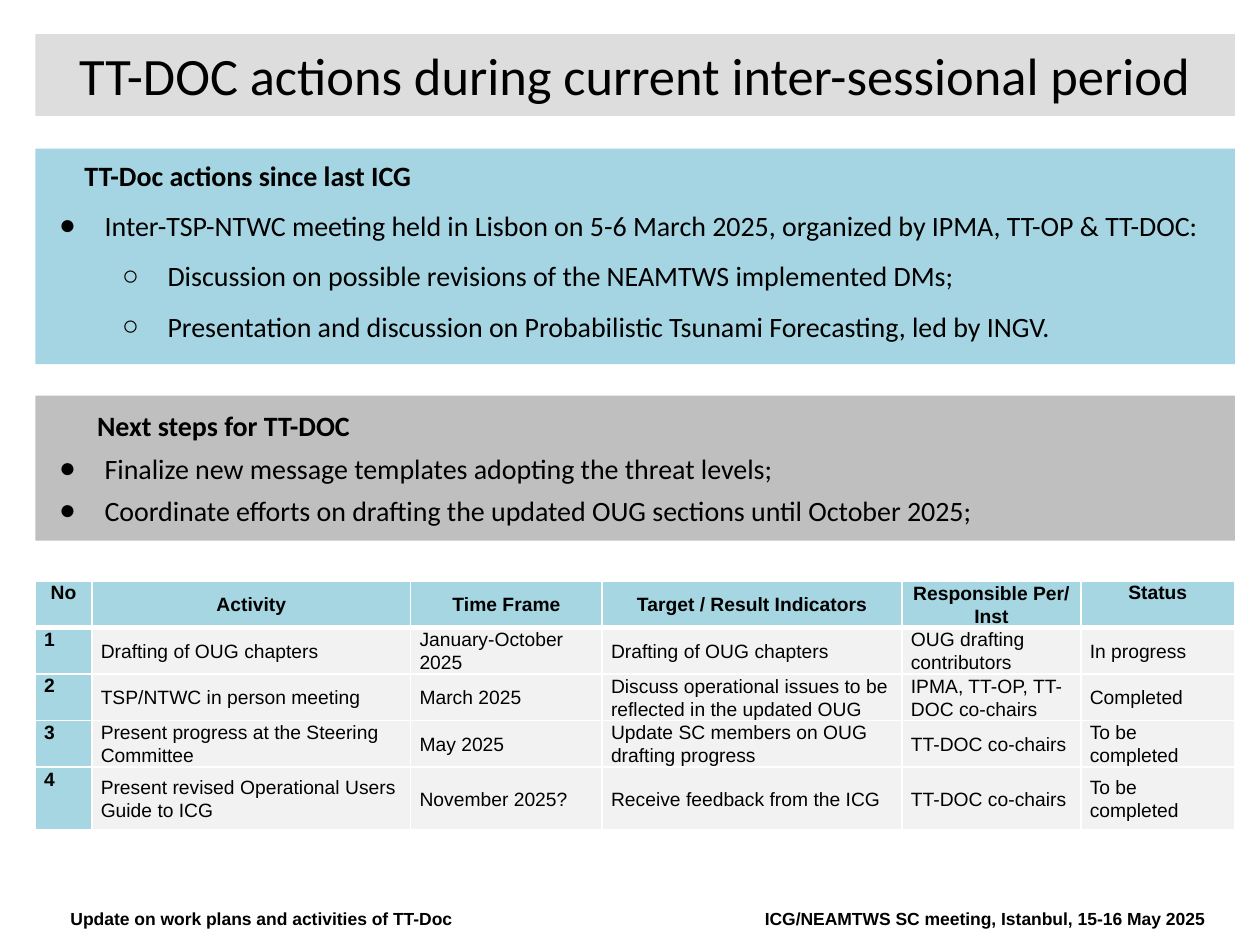
from lxml import etree
from pptx import Presentation
from pptx.dml.color import RGBColor
from pptx.enum import text
from pptx.oxml import ns
from pptx.util import Inches, Pt

BLUE, GRAY, BLACK = "A5D5E2", "BFBFBF", "000000"
HEAD_BLUE, PALE = "A5D6E2", "F2F2F2"
LEFT, WIDTH = 0.28, 9.52


def rgb(value):
    return RGBColor.from_string(value)


def add_run(p, words, size, font, bold=False):
    r = p.add_run()
    r.text = words
    r.font.size, r.font.name, r.font.bold = Pt(size), font, bold
    r.font.color.rgb = rgb(BLACK)


prs = Presentation()
prs.slide_width, prs.slide_height = Inches(10), Inches(7.5)
s = prs.slides.add_slide(prs.slide_layouts[3])
title, actions, steps = s.placeholders

# Filled bands for the title and the two lists
bands = [
    (title, 0.27, 0.65, "DDDDDD", text.MSO_ANCHOR.MIDDLE),
    (actions, 1.18, 1.71, BLUE, text.MSO_ANCHOR.TOP),
    (steps, 3.14, 1.15, GRAY, text.MSO_ANCHOR.MIDDLE),
]
for sp, top, height, fill, anchor in bands:
    sp.left, sp.top = Inches(LEFT), Inches(top)
    sp.width, sp.height = Inches(WIDTH), Inches(height)
    sp.fill.solid()
    sp.fill.fore_color.rgb = rgb(fill)
    tf = sp.text_frame
    tf.auto_size = text.MSO_AUTO_SIZE.NONE
    tf.vertical_anchor = anchor
    tf.margin_left = tf.margin_right = tf.margin_top = tf.margin_bottom = Inches(0.05)

# Title
p = title.text_frame.paragraphs[0]
p.alignment = text.PP_ALIGN.CENTER
add_run(p, "TT-DOC actions during current inter-sessional period", 30, "Calibri")

# Lists: bullet, left margin, line spacing, space before, words
lists = [
    (actions, [
        ("", 0.34, 1.1, 0, "TT-Doc actions since last ICG"),
        ("●", 0.5, 1.5, 0, "Inter-TSP-NTWC meeting held in Lisbon on 5-6 March 2025, "
                           "organized by IPMA, TT-OP & TT-DOC:"),
        ("○", 1, 1.5, 0, "Discussion on possible revisions of the NEAMTWS implemented DMs;"),
        ("○", 1, 1.5, 0, "Presentation and discussion on Probabilistic Tsunami Forecasting, "
                         "led by INGV."),
    ]),
    (steps, [
        ("", 0.44, 1, 5, "Next steps for TT-DOC"),
        ("●", 0.5, 1, 5, "Finalize new message templates adopting the threat levels;"),
        ("●", 0.5, 1, 5, "Coordinate efforts on drafting the updated OUG sections "
                         "until October 2025;"),
    ]),
]
for sp, items in lists:
    tf = sp.text_frame
    for i, (bullet, margin, spacing, before, words) in enumerate(items):
        p = tf.add_paragraph() if i else tf.paragraphs[0]
        p.level = 1 if bullet == "○" else 0
        p.line_spacing, p.space_before, p.space_after = spacing, Pt(before), Pt(0)
        add_run(p, words, 16, "Calibri", bold=not bullet)
        pPr = p._p.get_or_add_pPr()
        pPr.set("marL", str(Inches(margin)))
        pPr.set("indent", str(Inches(-0.36) if bullet else 0))
        if bullet:
            color = etree.SubElement(pPr, ns.qn("a:buClr"))
            etree.SubElement(color, ns.qn("a:srgbClr"), val=BLACK)
            etree.SubElement(pPr, ns.qn("a:buChar"), char=bullet)
        else:
            etree.SubElement(pPr, ns.qn("a:buNone"))

# Activity table
rows = [
    ["No", "Activity", "Time Frame", "Target / Result Indicators",
     "Responsible Per/ Inst", "Status"],
    ["1", "Drafting of OUG chapters", "January-October 2025", "Drafting of OUG chapters",
     "OUG drafting contributors", "In progress"],
    ["2", "TSP/NTWC in person meeting", "March 2025",
     "Discuss operational issues to be reflected in the updated OUG",
     "IPMA, TT-OP, TT-DOC co-chairs", "Completed"],
    ["3", "Present progress at the Steering Committee", "May 2025",
     "Update SC members on OUG drafting progress", "TT-DOC co-chairs", "To be completed"],
    ["4", "Present revised Operational Users Guide to ICG", "November 2025?",
     "Receive feedback from the ICG", "TT-DOC co-chairs", "To be completed"],
]
col_widths = [0.45, 2.53, 1.52, 2.38, 1.42, 1.22]
row_heights = [0.37, 0.37, 0.37, 0.37, 0.5]
table = s.shapes.add_table(len(rows), len(col_widths), Inches(LEFT), Inches(4.61),
                           Inches(WIDTH), Inches(sum(row_heights))).table
table.horz_banding = False
for column, width in zip(table.columns, col_widths):
    column.width = Inches(width)
for row, height in zip(table.rows, row_heights):
    row.height = Inches(height)

for i, row in enumerate(rows):
    for j, words in enumerate(row):
        cell = table.cell(i, j)
        is_head = i == 0 or j == 0
        cell.fill.solid()
        cell.fill.fore_color.rgb = rgb(HEAD_BLUE if is_head else PALE)
        cell.margin_left = cell.margin_right = Inches(0.07)
        cell.margin_top = cell.margin_bottom = 0
        at_top = j == 0 or (i == 0 and j == len(row) - 1)
        cell.vertical_anchor = text.MSO_ANCHOR.TOP if at_top else text.MSO_ANCHOR.MIDDLE
        p = cell.text_frame.paragraphs[0]
        p.alignment = text.PP_ALIGN.LEFT if i else text.PP_ALIGN.CENTER
        p.line_spacing = 1.07
        p.space_before, p.space_after = Pt(0 if i else 8), Pt(8)
        add_run(p, words, 11, "Arial", bold=is_head)
        # White borders, thicker under the header row
        tcPr = cell._tc.get_or_add_tcPr()
        for k, side in enumerate("LRTB"):
            thick = (i, side) in [(0, "B"), (1, "T")]
            ln = etree.Element(ns.qn("a:ln" + side), w=str(Pt(3 if thick else 1)))
            fill = etree.SubElement(ln, ns.qn("a:solidFill"))
            etree.SubElement(fill, ns.qn("a:srgbClr"), val="FFFFFF")
            tcPr.insert(k, ln)

# Footer
footers = [
    (0.51, 3.46, "Update on work plans and activities of TT-Doc"),
    (6.02, 3.67, "ICG/NEAMTWS SC meeting, Istanbul, 15-16 May 2025"),
]
for left, width, words in footers:
    tf = s.shapes.add_textbox(Inches(left), Inches(7.16), Inches(width), Inches(0.27)).text_frame
    tf.word_wrap = True
    tf.margin_left = tf.margin_right = tf.margin_top = tf.margin_bottom = Inches(0.05)
    add_run(tf.paragraphs[0], words, 10, "Arial", bold=True)

prs.save("out.pptx")
